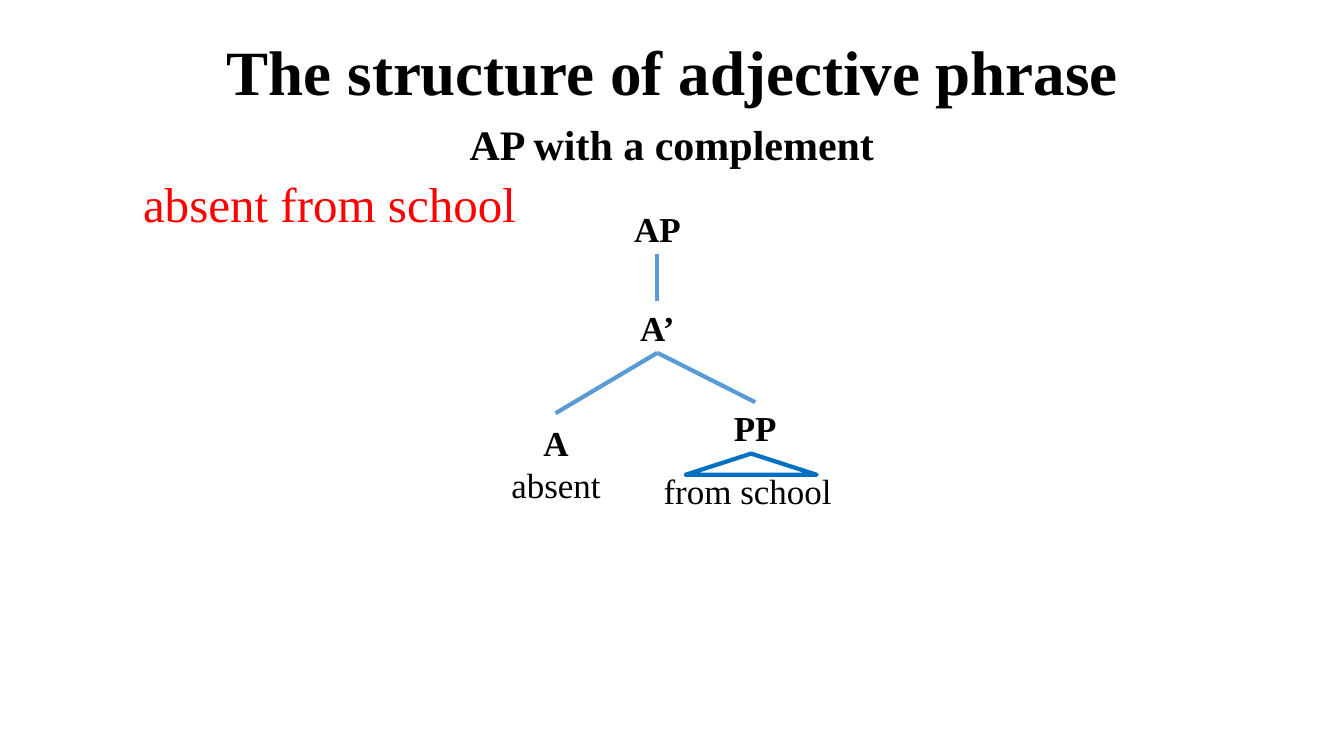
from pptx import Presentation
from pptx.dml.color import RGBColor
from pptx.enum.shapes import MSO_CONNECTOR, MSO_SHAPE
from pptx.enum.text import MSO_ANCHOR, PP_ALIGN
from pptx.oxml.ns import qn
from pptx.util import Inches, Pt

BLACK = RGBColor(0x00, 0x00, 0x00)
WHITE = RGBColor(0xFF, 0xFF, 0xFF)
RED = RGBColor(0xFF, 0x00, 0x00)
BRANCH_BLUE = RGBColor(0x5B, 0x9B, 0xD5)
TRIANGLE_BLUE = RGBColor(0x00, 0x70, 0xC0)
FONT = "Times New Roman"
NODE_W, NODE_H = 0.87, 0.51


def add_text(s, box, text, size, bold=True, color=BLACK,
             anchor=MSO_ANCHOR.MIDDLE, spacing=1.0):
    """Add centred text in a box of (left, top, width, height) inches."""
    tb = s.shapes.add_textbox(*map(Inches, box))
    tf = tb.text_frame
    tf.word_wrap = True
    tf.vertical_anchor = anchor
    tf.text = text
    for p in tf.paragraphs:
        p.alignment = PP_ALIGN.CENTER
        p.line_spacing = spacing
        for r in p.runs:
            r.font.name = FONT
            r.font.size = Pt(size)
            r.font.bold = bold
            r.font.color.rgb = color
    return tb


def add_branch(s, start, end):
    line = s.shapes.add_connector(MSO_CONNECTOR.STRAIGHT,
                                  *map(Inches, start + end))
    line.line.color.rgb = BRANCH_BLUE
    line.line.width = Pt(3)
    sp_pr = line._element.spPr
    sp_pr.append(sp_pr.makeelement(qn("a:effectLst"), {}))


def add_headings(s, left, top, width):
    add_text(s, (left + 0.44, top, width - 0.87, 0.7),
             "The structure of adjective phrase", 45, spacing=0.9)
    add_text(s, (left, top + 0.78, width, 5.95), "AP with a complement", 30,
             anchor=MSO_ANCHOR.TOP, spacing=0.9)


def add_example(s, left, top, width, height):
    tb = add_text(s, (left, top, width, height), "absent from school", 35,
                  bold=False, color=RED)
    tb.fill.solid()
    tb.fill.fore_color.rgb = WHITE


def add_tree(s, left, top):
    # Node centres and levels
    mid, a_x, pp_x = left + 1.56, left + 0.55, left + 2.53
    bar_top, pp_top, a_top = top + 0.98, top + 1.98, top + 2.09

    # Nodes
    for label, x, y in (("AP", mid, top), ("A’", mid, bar_top),
                        ("PP", pp_x, pp_top)):
        add_text(s, (x - NODE_W / 2, y, NODE_W, NODE_H), label, 25)
    head = add_text(s, (a_x - 0.55, a_top, 1.11, 1), "A\nabsent", 25)
    head.text_frame.paragraphs[1].runs[0].font.bold = False

    # Triangle over the complement
    triangle = s.shapes.add_shape(
        MSO_SHAPE.ISOSCELES_TRIANGLE, Inches(left + 1.84),
        Inches(pp_top + NODE_H), Inches(1.3), Inches(0.21))
    triangle.shadow.inherit = False
    triangle.fill.background()
    triangle.line.color.rgb = TRIANGLE_BLUE
    triangle.line.width = Pt(3)
    add_text(s, (left + 1.45, top + 2.59, 2.01, 0.54), "from school", 25,
             bold=False)

    # Branches
    add_branch(s, (mid, top + NODE_H), (mid, bar_top))
    for end in ((a_x, a_top), (pp_x, pp_top)):
        add_branch(s, (mid, bar_top + NODE_H), end)


def main():
    prs = Presentation()
    prs.slide_width, prs.slide_height = Inches(13.33), Inches(7.5)
    s = prs.slides.add_slide(prs.slide_layouts[6])
    add_headings(s, 0.48, 0.4, 12.37)
    add_example(s, 1.18, 1.69, 4.18, 0.65)
    add_tree(s, 4.96, 2.01)
    prs.save("out.pptx")


if __name__ == "__main__":
    main()
